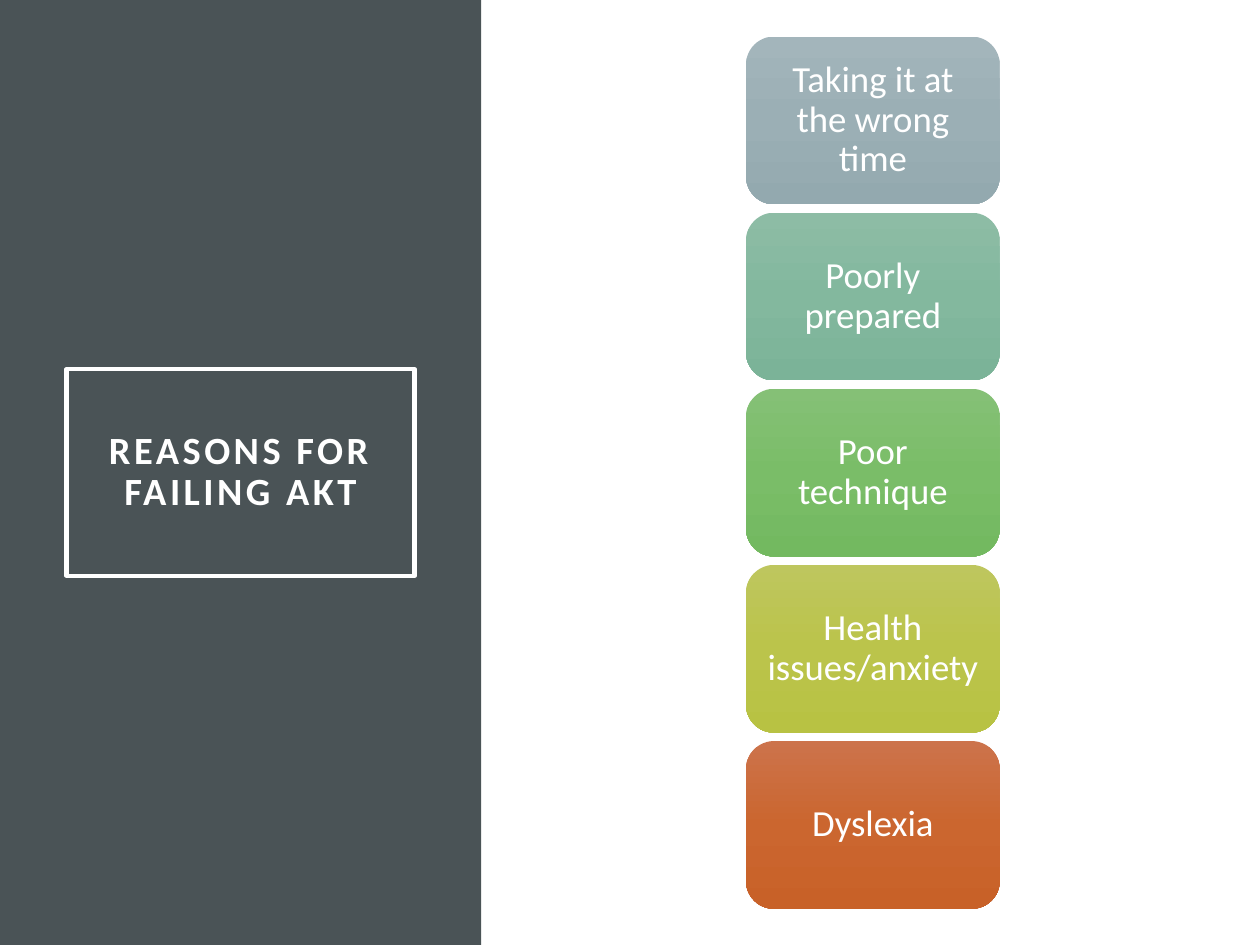
from copy import deepcopy

from pptx import Presentation
from pptx.dml.color import RGBColor
from pptx.enum.shapes import MSO_SHAPE as Shape
from pptx.enum.text import MSO_ANCHOR as Anchor, MSO_AUTO_SIZE as AutoSize, PP_ALIGN as Align
from pptx.util import Pt

FONT = "Calibri"
COLORS = {"panel": "4A5356", "white": "FFFFFF"}
REASONS = [
    ("Taking it at the wrong time", ("A3B5BB", "9BAFB5", "93A9AF")),
    ("Poorly prepared", ("8DBCA5", "83B89E", "7BB398")),
    ("Poor technique", ("85C076", "7ABD68", "73B960")),
    ("Health issues/anxiety", ("BEC65E", "BBC44B", "B8C243")),
    ("Dyslexia", ("CC734B", "CB662F", "C86128")),
]


def write_text(box, text, size, inset_x, inset_y):
    frame = box.text_frame
    frame.word_wrap = True
    frame.auto_size = AutoSize.NONE
    frame.vertical_anchor = Anchor.MIDDLE
    frame.margin_left = frame.margin_right = Pt(inset_x)
    frame.margin_top = frame.margin_bottom = Pt(inset_y)
    para = frame.paragraphs[0]
    para.alignment = Align.CENTER
    para.line_spacing = 0.9
    span = para.add_run()
    span.text = text
    span.font.name = FONT
    span.font.size = Pt(size)
    span.font.color.rgb = RGBColor.from_string(COLORS["white"])
    return span


def fill_gradient(box, shades):
    box.fill.gradient()
    box.fill.gradient_angle = 270
    first = box.fill.gradient_stops[0]._gs
    first.addnext(deepcopy(first))
    for index, (stop, shade) in enumerate(zip(box.fill.gradient_stops, shades)):
        stop.position = index / (len(shades) - 1)
        stop.color.rgb = RGBColor.from_string(shade)


def add_title_panel(page, left, top, width, height):
    panel = page.shapes.add_shape(Shape.RECTANGLE, Pt(left), Pt(top), Pt(width), Pt(height))
    panel.shadow.inherit = False
    panel.fill.solid()
    panel.fill.fore_color.rgb = RGBColor.from_string(COLORS["panel"])
    panel.line.fill.background()

    title = page.shapes.title
    title.element.addprevious(panel.element)
    title_width, title_height = 198.8, 118
    title.left = Pt(left + (width - title_width) / 2)
    title.top = Pt(top + (height - title_height) / 2)
    title.width, title.height = Pt(title_width), Pt(title_height)
    title.line.color.rgb = RGBColor.from_string(COLORS["white"])
    title.line.width = Pt(2.5)
    span = write_text(title, "REASONS FOR FAILING AKT", 22, 14.4, 14.4)
    span.font.bold = True
    span.font._element.set("spc", "200")


def add_reason_stack(page, left, top, width, height):
    gap = 4.8
    box_height = (height - gap * (len(REASONS) - 1)) / len(REASONS)
    for index, (text, shades) in enumerate(REASONS):
        box_top = top + index * (box_height + gap)
        box = page.shapes.add_shape(
            Shape.ROUNDED_RECTANGLE, Pt(left), Pt(box_top), Pt(width), Pt(box_height))
        box.shadow.inherit = False
        box.line.fill.background()
        fill_gradient(box, shades)
        write_text(box, text, 21, 6, 3)


def main():
    deck = Presentation()
    deck.slide_width, deck.slide_height = Pt(720), Pt(540)
    page = deck.slides.add_slide(deck.slide_layouts[5])
    add_title_panel(page, 0, 0, 275, 540)
    add_reason_stack(page, 426.3, 20.9, 145, 498.4)
    deck.save("out.pptx")


if __name__ == "__main__":
    main()
